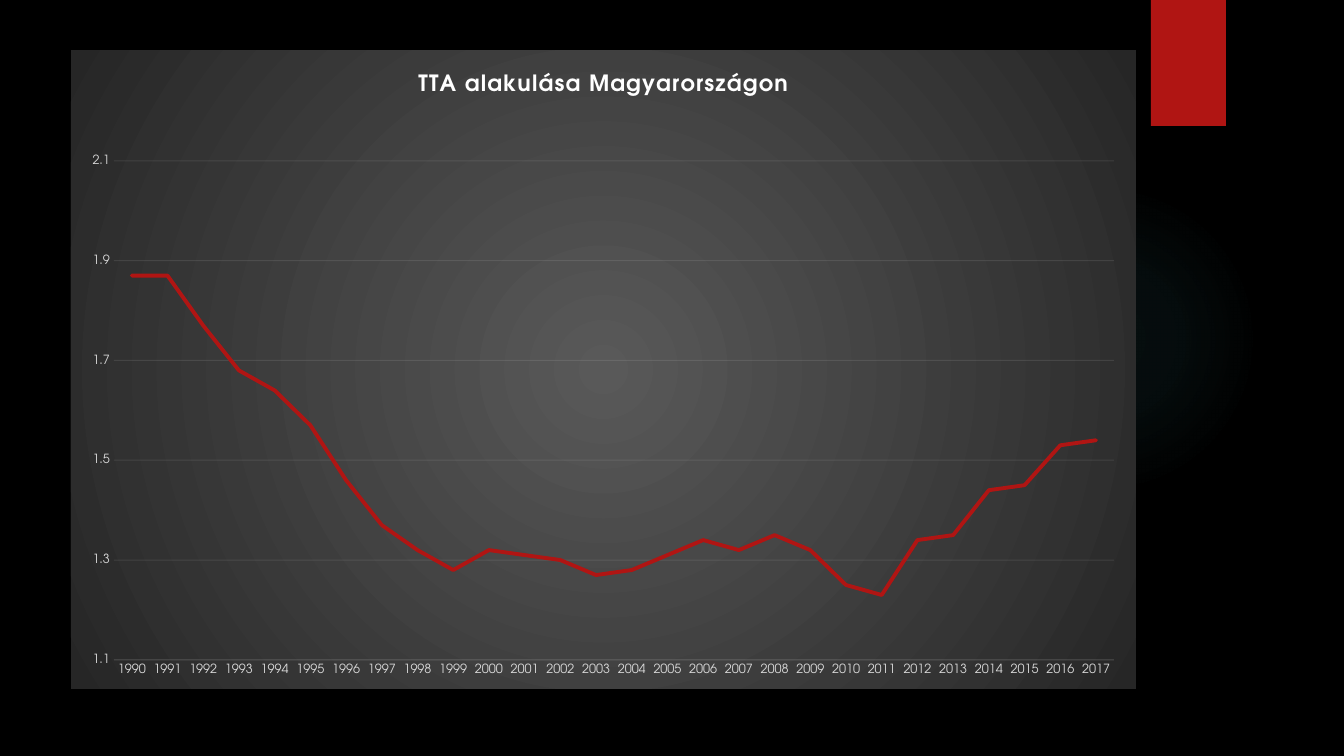
from typing import NamedTuple

from lxml import etree
from pptx import Presentation
from pptx import util as u
from pptx.chart import data as chart_data
from pptx.dml import color
from pptx.enum import chart as chart_enum, shapes
from pptx.oxml import ns, parse_xml

PX_PER_INCH = 100.8
FONT = "TeX Gyre Adventor"
RED = "B01513"
WHITE = "FFFFFF"
LABEL_GREY = "D9D9D9"
GRID_GREY = "F2F2F2"
FIRST_YEAR = 1990
RATES = (
    1.87, 1.87, 1.77, 1.68, 1.64, 1.57, 1.46, 1.37, 1.32, 1.28, 1.32, 1.31, 1.3, 1.27,
    1.28, 1.31, 1.34, 1.32, 1.35, 1.32, 1.25, 1.23, 1.34, 1.35, 1.44, 1.45, 1.53, 1.54,
)


class Area(NamedTuple):
    left: int
    top: int
    width: int
    height: int


class Stop(NamedTuple):
    position: int
    color: str
    opacity: int = 100


GLOW = Area(949, 184, 310, 310)
RIBBON = Area(1151, 0, 75, 126)
CHART = Area(71, 50, 1065, 639)
PLOT = Area(114, 111, 1000, 549)


def px(length: int) -> u.Emu:
    return u.Inches(length / PX_PER_INCH)


def emu_area(area: Area) -> list[u.Emu]:
    return [px(length) for length in area]


def rgb(value: str) -> color.RGBColor:
    return color.RGBColor.from_string(value)


def radial_gradient(stops: list[Stop]) -> etree._Element:
    stop_xml = "".join(
        f'<a:gs pos="{stop.position * 1000}"><a:srgbClr val="{stop.color}">'
        f'<a:alpha val="{stop.opacity * 1000}"/></a:srgbClr></a:gs>'
        for stop in stops
    )
    return parse_xml(
        f'<a:gradFill {ns.nsdecls("a")} rotWithShape="1"><a:gsLst>{stop_xml}</a:gsLst>'
        '<a:path path="circle"><a:fillToRect l="50000" t="50000" r="50000" b="50000"/>'
        "</a:path></a:gradFill>"
    )


def add_plain_shape(page, kind: shapes.MSO_SHAPE, area: Area):
    shape = page.shapes.add_shape(kind, *emu_area(area))
    shape.shadow.inherit = False
    shape.line.fill.background()
    return shape


def add_glow(page) -> None:
    glow = add_plain_shape(page, shapes.MSO_SHAPE.OVAL, GLOW)
    stops = [Stop(0, "50B9C1", 7), Stop(36, "50B9C1", 6), Stop(69, "50B9C1", 0)]
    glow.element.spPr.insert(2, radial_gradient(stops))


def add_ribbon(page) -> None:
    ribbon = add_plain_shape(page, shapes.MSO_SHAPE.RECTANGLE, RIBBON)
    ribbon.fill.solid()
    ribbon.fill.fore_color.rgb = rgb(RED)
    effects = ribbon.element.spPr.find(ns.qn("a:effectLst"))
    effects.append(parse_xml(
        f'<a:outerShdw {ns.nsdecls("a")} blurRad="{u.Pt(3)}" dist="{u.Pt(2)}" dir="5400000">'
        '<a:srgbClr val="000000"><a:alpha val="45000"/></a:srgbClr></a:outerShdw>'
    ))


def style_font(font, size: int, font_color: str, bold: bool = False) -> None:
    font.name = FONT
    font.size = u.Pt(size)
    font.bold = bold
    font.color.rgb = rgb(font_color)


def style_faint_line(line_format) -> None:
    line = line_format.line
    line.width = u.Pt(0.75)
    line.color.rgb = rgb(GRID_GREY)
    for tint in line_format.element.iter(ns.qn("a:srgbClr")):
        etree.SubElement(tint, ns.qn("a:alpha")).set("val", "10000")


def style_axes(chart) -> None:
    years, rates = chart.category_axis, chart.value_axis
    for axis in (years, rates):
        axis.major_tick_mark = axis.minor_tick_mark = chart_enum.XL_TICK_MARK.NONE
        style_font(axis.tick_labels.font, 9, LABEL_GREY)
    years.has_major_gridlines = False
    rates.minimum_scale, rates.maximum_scale, rates.major_unit = 1.1, 2.2, 0.2
    rates.tick_labels.number_format = "0.0"
    rates.tick_labels.number_format_is_linked = False
    rates.format.line.fill.background()
    for owner in (years, rates.major_gridlines):
        line = owner.format.line
        line.width = u.Pt(0.75)
        line.color.rgb = rgb(GRID_GREY)
    plot_area = chart.element.chart.plotArea
    for tint in plot_area.iter(ns.qn("a:srgbClr")):
        if tint.get("val") == GRID_GREY:
            etree.SubElement(tint, ns.qn("a:alpha")).set("val", "10000")


def fix_plot_area(chart) -> None:
    """Pin the inner plot area to PLOT, as fractions of the chart."""
    fractions = {
        "x": (PLOT.left - CHART.left) / CHART.width,
        "y": (PLOT.top - CHART.top) / CHART.height,
        "w": PLOT.width / CHART.width,
        "h": PLOT.height / CHART.height,
    }
    modes = '<c:xMode val="edge"/><c:yMode val="edge"/>'
    sizes = "".join(f'<c:{key} val="{value}"/>' for key, value in fractions.items())
    plot_area = chart.element.chart.plotArea
    for layout in plot_area.findall(ns.qn("c:layout")):
        plot_area.remove(layout)
    plot_area.insert(0, parse_xml(
        f'<c:layout {ns.nsdecls("c")}><c:manualLayout><c:layoutTarget val="inner"/>'
        f"{modes}{sizes}</c:manualLayout></c:layout>"
    ))


def add_title(chart) -> None:
    para = chart.chart_title.text_frame.paragraphs[0]
    span = para.add_run()
    span.text = "TTA alakulása Magyarországon"
    style_font(span.font, 16, WHITE, bold=True)
    span.font._element.set("spc", "100")
    chart.chart_title.include_in_layout = False


def add_rate_chart(page) -> None:
    table = chart_data.CategoryChartData()
    table.categories = [str(FIRST_YEAR + index) for index in range(len(RATES))]
    table.add_series("Series 1", RATES)
    frame = page.shapes.add_chart(chart_enum.XL_CHART_TYPE.LINE, *emu_area(CHART), table)
    chart = frame.chart
    chart.has_legend = False
    style_font(chart.font, 10, WHITE)
    add_title(chart)
    style_axes(chart)
    fix_plot_area(chart)

    plot = chart.plots[0]
    plot.vary_by_categories = False
    series = plot.series[0]
    series.smooth = False
    series.format.line.width = u.Pt(2.75)
    series.format.line.color.rgb = rgb(RED)
    series.format.line._ln.set("cap", "rnd")

    panel = parse_xml(f'<c:spPr {ns.nsdecls("c", "a")}><a:ln><a:noFill/></a:ln></c:spPr>')
    panel.insert(0, radial_gradient([Stop(0, "595959"), Stop(100, "262626")]))
    chart.element.chart.addnext(panel)


def main() -> None:
    deck = Presentation()
    deck.slide_width, deck.slide_height = px(1344), px(756)
    page = deck.slides.add_slide(deck.slide_layouts[6])
    page.background.fill.solid()
    page.background.fill.fore_color.rgb = rgb("000000")
    add_glow(page)
    add_ribbon(page)
    add_rate_chart(page)
    deck.save("out.pptx")


if __name__ == "__main__":
    main()
